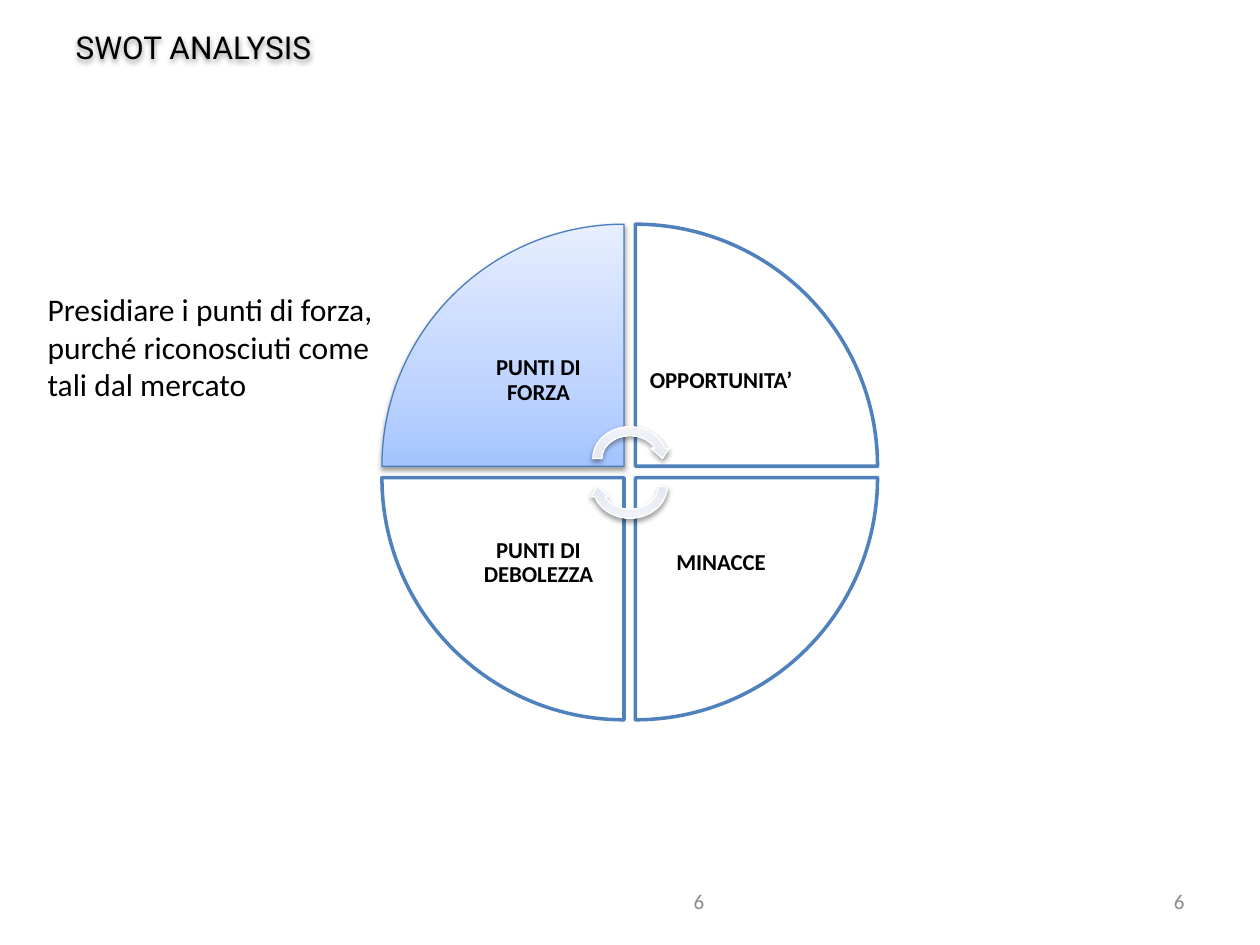
from lxml import etree
from pptx import Presentation
from pptx.dml.color import RGBColor
from pptx.enum.shapes import MSO_SHAPE
from pptx.enum.text import MSO_ANCHOR, PP_ALIGN
from pptx.oxml import parse_xml
from pptx.oxml.ns import nsdecls, qn
from pptx.util import Cm, Pt

WEDGE, ARROW = MSO_SHAPE.PIE_WEDGE, MSO_SHAPE.CIRCULAR_ARROW
LEFT, CENTER, RIGHT = PP_ALIGN.LEFT, PP_ALIGN.CENTER, PP_ALIGN.RIGHT
TOP, MIDDLE = MSO_ANCHOR.TOP, MSO_ANCHOR.MIDDLE

TITLE = "SWOT ANALYSIS"
NOTE = "Presidiare i punti di forza, purché riconosciuti come tali dal mercato"
PAGE_NUMBER = "6"
PAGE_NUMBER_LEFTS = (18.21, 8.53)
# label, column, row, rotation
QUADRANTS = [
    ("PUNTI DI FORZA", 0, 0, 0),
    ("OPPORTUNITA’", 1, 0, 90),
    ("MINACCE", 1, 1, 180),
    ("PUNTI DI DEBOLEZZA", 0, 1, 270),
]
ARROWS = [(8.51, 0), (9.07, 180)]  # top, rotation
BLUE_GRADIENT = [(0, "A4C4FF"), (35, "BFD4FF"), (100, "E6EEFF")]
GREY_GRADIENT = [(0, "D3D9E9"), (35, "E0E4EF"), (100, "F2F4F9")]

# Lengths in centimetres
WHEEL_LEFT, WHEEL_TOP = 7.7, 4.52
WEDGE_SIZE, PITCH, LABEL_SIZE = 4.88, 5.11, 3.45


def rgb(color):
    return RGBColor.from_string(color)


def add_shadow(sp):
    sp.shadow.inherit = False
    effects = sp.element.spPr.find(qn("a:effectLst"))
    effects.append(parse_xml(
        f'<a:outerShdw {nsdecls("a")} blurRad="{Pt(3.1)}" dist="{Pt(1.6)}" '
        'dir="5400000" rotWithShape="0"><a:srgbClr val="000000">'
        '<a:alpha val="38000"/></a:srgbClr></a:outerShdw>'))


def fill_gradient(sp, stops):
    """Fill from bottom to top with any number of stops."""
    sp.fill.gradient()
    sp.fill.gradient_angle = 90
    stop_list = sp.element.spPr.find(qn("a:gradFill")).find(qn("a:gsLst"))
    for old in list(stop_list):
        stop_list.remove(old)
    for percent, color in stops:
        stop = etree.SubElement(stop_list, qn("a:gs"), pos=str(percent * 1000))
        etree.SubElement(stop, qn("a:srgbClr"), val=color)


def add_figure(slide, kind, box, rotation, line, width, gradient=None):
    sp = slide.shapes.add_shape(kind, *map(Cm, box))
    sp.rotation = rotation
    sp.line.color.rgb = rgb(line)
    sp.line.width = Pt(width)
    if gradient:
        fill_gradient(sp, gradient)
        add_shadow(sp)
    else:
        sp.fill.solid()
        sp.fill.fore_color.rgb = rgb("FFFFFF")
        sp.shadow.inherit = False


def write(sp, text, size, align=LEFT, anchor=MIDDLE, color="000000",
          font="Calibri", bold=False):
    tf = sp.text_frame
    tf.word_wrap = True
    tf.vertical_anchor = anchor
    p = tf.paragraphs[0]
    p.text = text
    p.alignment = align
    p.font.name = font
    p.font.size = Pt(size)
    p.font.bold = bold
    p.font.color.rgb = rgb(color)
    return p


def add_text(slide, box, text, size, **style):
    return write(slide.shapes.add_textbox(*map(Cm, box)), text, size, **style)


def add_wheel(slide):
    for label, col, row, rotation in QUADRANTS:
        left, top = WHEEL_LEFT + col * PITCH, WHEEL_TOP + row * PITCH
        highlighted = rotation == 0
        add_figure(slide, WEDGE, (left, top, WEDGE_SIZE, WEDGE_SIZE), rotation,
                   "4B7EBC" if highlighted else "4F81BD",
                   0.75 if highlighted else 2,
                   BLUE_GRADIENT if highlighted else None)
        # Each label sits in the corner nearest the centre of the wheel
        inset = WEDGE_SIZE - LABEL_SIZE
        box = (left + inset * (1 - col), top + inset * (1 - row),
               LABEL_SIZE, LABEL_SIZE)
        p = add_text(slide, box, label, 13, align=CENTER, bold=True)
        p.line_spacing = 0.9
        p.space_after = Pt(4.55)
    for top, rotation in ARROWS:
        add_figure(slide, ARROW, (11.86, top, 1.68, 1.47), rotation,
                   "FFFFFF", 0.75, GREY_GRADIENT)


def main():
    prs = Presentation()
    prs.slide_width, prs.slide_height = Cm(25.4), Cm(19.05)
    slide = prs.slides.add_slide(prs.slide_layouts[5])

    for left in PAGE_NUMBER_LEFTS:
        add_text(slide, (left, 17.65, 5.92, 1.02), PAGE_NUMBER, 12,
                 align=RIGHT, color="8C8C8C")
    add_wheel(slide)
    add_text(slide, (0.71, 5.72, 7.82, 2.57), NOTE, 18, anchor=TOP)

    title = slide.shapes.title
    title.left, title.top, title.width, title.height = map(
        Cm, (1.27, 0.43, 5.66, 1.02))
    write(title, TITLE, 18, font="Roboto")
    add_shadow(title)

    prs.save("out.pptx")


if __name__ == "__main__":
    main()
